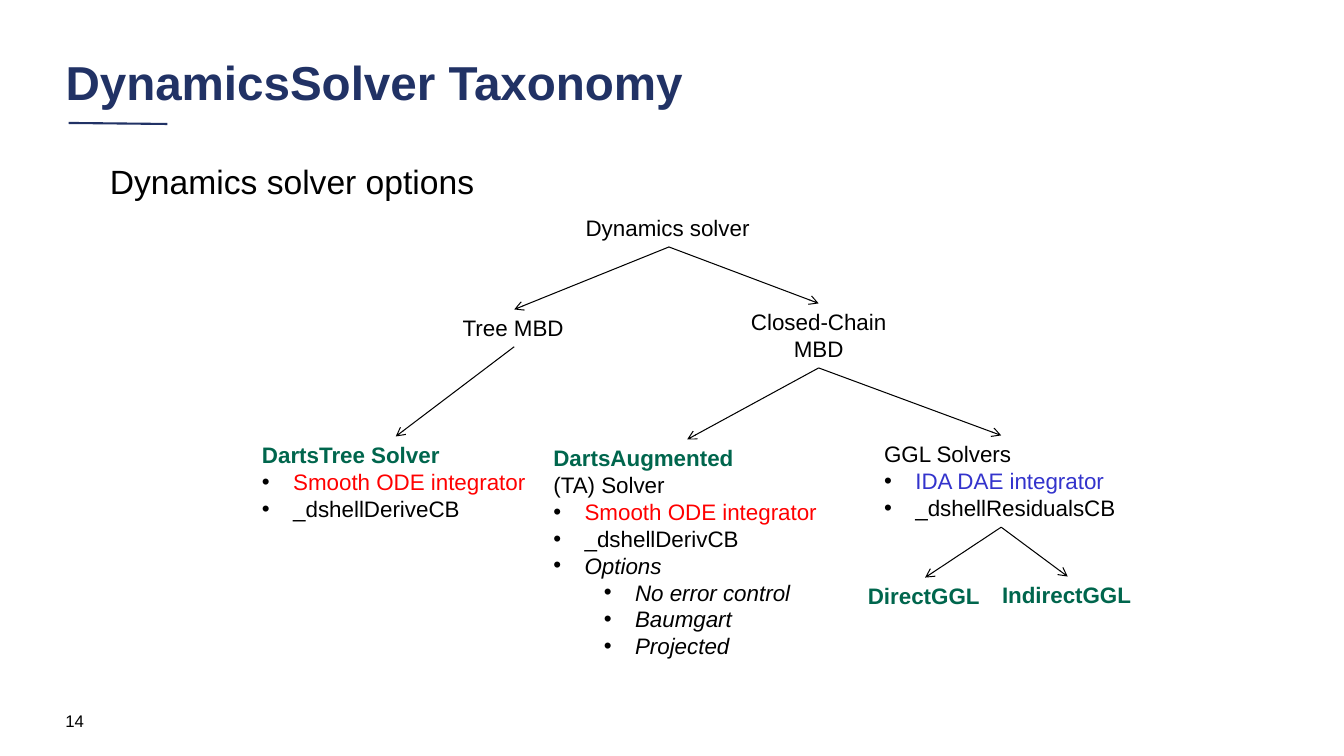
from dataclasses import dataclass

from lxml.etree import SubElement
from pptx import Presentation
from pptx.dml.color import RGBColor
from pptx.enum.shapes import MSO_CONNECTOR
from pptx.enum.text import MSO_ANCHOR, MSO_AUTO_SIZE, PP_ALIGN
from pptx.oxml.ns import qn
from pptx.util import Inches, Pt

COLORS = {
    "navy": "213265",
    "black": "000000",
    "green": "00664D",
    "red": "FF0000",
    "blue": "3333CC",
}
TOP, BOTTOM = 0, 2


@dataclass
class Line:
    text: str
    color: str = "black"
    bold: bool = False
    italic: bool = False
    indent: float = 0
    level: int = 0


def bullet(text, color="black", italic=False, level=0):
    return Line(text, color, False, italic, 0.31 + 0.5 * level, level)


class TaxonomySlide:
    font_name = "Arial"
    node_size = 16

    def __init__(self, deck):
        self.slide = deck.slides.add_slide(deck.slide_layouts[1])

    def style(self, paragraph, size, color="black", bold=False, italic=False):
        for run in paragraph.runs:
            run.font.name = self.font_name
            run.font.size = Pt(size)
            run.font.bold = bold
            run.font.italic = italic
            run.font.color.rgb = RGBColor.from_string(COLORS[color])

    def placeholder(self, index, text, box, size, color, bold, anchor, indent):
        holder = self.slide.placeholders[index]
        holder.left, holder.top, holder.width, holder.height = map(Inches, box)
        frame = holder.text_frame
        frame.text = text
        frame.word_wrap = True
        frame.auto_size = MSO_AUTO_SIZE.NONE
        frame.vertical_anchor = anchor
        paragraph = frame.paragraphs[0]
        paragraph.alignment = PP_ALIGN.LEFT
        paragraph.line_spacing = 0.9
        paragraph.space_before = Pt(0)
        properties = paragraph._p.get_or_add_pPr()
        properties.set("marL", str(Inches(indent)))
        properties.set("indent", "0")
        SubElement(properties, qn("a:buNone"))
        self.style(paragraph, size, color, bold)

    def page_number(self, text, box):
        frame = self.slide.shapes.add_textbox(*map(Inches, box)).text_frame
        frame.text = text
        frame.word_wrap = True
        frame.vertical_anchor = MSO_ANCHOR.MIDDLE
        self.style(frame.paragraphs[0], 12)

    def add_bullet(self, paragraph, indent):
        properties = paragraph._p.get_or_add_pPr()
        properties.set("marL", str(Inches(indent)))
        properties.set("indent", str(-Inches(0.31)))
        bullet_color = SubElement(properties, qn("a:buClr"))
        SubElement(bullet_color, qn("a:srgbClr"), val=COLORS["black"])
        SubElement(properties, qn("a:buFont"), typeface=self.font_name)
        SubElement(properties, qn("a:buChar"), char="•")

    def node(self, box, lines, alignment=PP_ALIGN.LEFT):
        node = self.slide.shapes.add_textbox(*map(Inches, box))
        frame = node.text_frame
        frame.word_wrap = False
        frame.auto_size = MSO_AUTO_SIZE.SHAPE_TO_FIT_TEXT
        frame.text = "\n".join(line.text for line in lines)
        for paragraph, line in zip(frame.paragraphs, lines):
            paragraph.alignment = alignment
            paragraph.level = line.level
            if line.indent:
                self.add_bullet(paragraph, line.indent)
            self.style(paragraph, self.node_size, line.color, line.bold, line.italic)
        return node

    def rule(self, start, end, color, width):
        rule = self.slide.shapes.add_connector(
            MSO_CONNECTOR.STRAIGHT, *map(Inches, start + end))
        rule.line.color.rgb = RGBColor.from_string(COLORS[color])
        rule.line.width = Pt(width)
        SubElement(rule._element.spPr, qn("a:effectLst"))
        return rule

    def branch(self, parent, child):
        arrow = self.rule((0, 0), (1, 1), "black", 0.75)
        arrow.begin_connect(parent, BOTTOM)
        arrow.end_connect(child, TOP)
        SubElement(arrow.line._get_or_add_ln(), qn("a:tailEnd"), type="arrow")


def main():
    deck = Presentation()
    deck.slide_width, deck.slide_height = Inches(13.33), Inches(7.5)
    page = TaxonomySlide(deck)

    page.rule((0.68, 1.22), (1.66, 1.23), "navy", 1.5)
    page.page_number("14", (0.55, 6.95, 3, 0.4))
    page.placeholder(0, "DynamicsSolver Taxonomy", (0.55, 0.46, 11.12, 0.76),
                     34, "navy", True, MSO_ANCHOR.MIDDLE, 0)
    page.placeholder(1, "Dynamics solver options", (0.91, 1.59, 4.32, 0.75),
                     24, "black", False, MSO_ANCHOR.TOP, 0.08)

    dynamics_solver = page.node((5.71, 2.08, 1.85, 0.37), [Line("Dynamics solver")])
    tree_mbd = page.node((4.49, 3.07, 1.22, 0.37), [Line("Tree MBD")])
    closed_chain = page.node((7.34, 3.01, 1.56, 0.64),
                             [Line("Closed-Chain"), Line("MBD")], PP_ALIGN.CENTER)
    darts_tree = page.node((2.5, 4.33, 2.85, 0.91), [
        Line("DartsTree Solver", "green", True),
        bullet("Smooth ODE integrator", "red"),
        bullet("_dshellDeriveCB"),
    ])
    darts_augmented = page.node((5.39, 4.36, 2.85, 2.26), [
        Line("DartsAugmented", "green", True),
        Line("(TA) Solver"),
        bullet("Smooth ODE integrator", "red"),
        bullet("_dshellDerivCB"),
        bullet("Options", italic=True),
        *(bullet(option, italic=True, level=1)
          for option in ("No error control", "Baumgart", "Projected")),
    ])
    ggl_solvers = page.node((8.67, 4.32, 2.52, 0.91), [
        Line("GGL Solvers"),
        bullet("IDA DAE integrator", "blue"),
        bullet("_dshellResidualsCB"),
    ])
    direct_ggl = page.node((8.51, 5.73, 1.33, 0.37), [Line("DirectGGL", "green", True)])
    indirect_ggl = page.node((9.84, 5.72, 1.5, 0.37), [Line("IndirectGGL", "green", True)])

    taxonomy = [
        (dynamics_solver, (tree_mbd, closed_chain)),
        (tree_mbd, (darts_tree,)),
        (closed_chain, (darts_augmented, ggl_solvers)),
        (ggl_solvers, (direct_ggl, indirect_ggl)),
    ]
    for parent, children in taxonomy:
        for child in children:
            page.branch(parent, child)

    deck.save("out.pptx")


if __name__ == "__main__":
    main()
